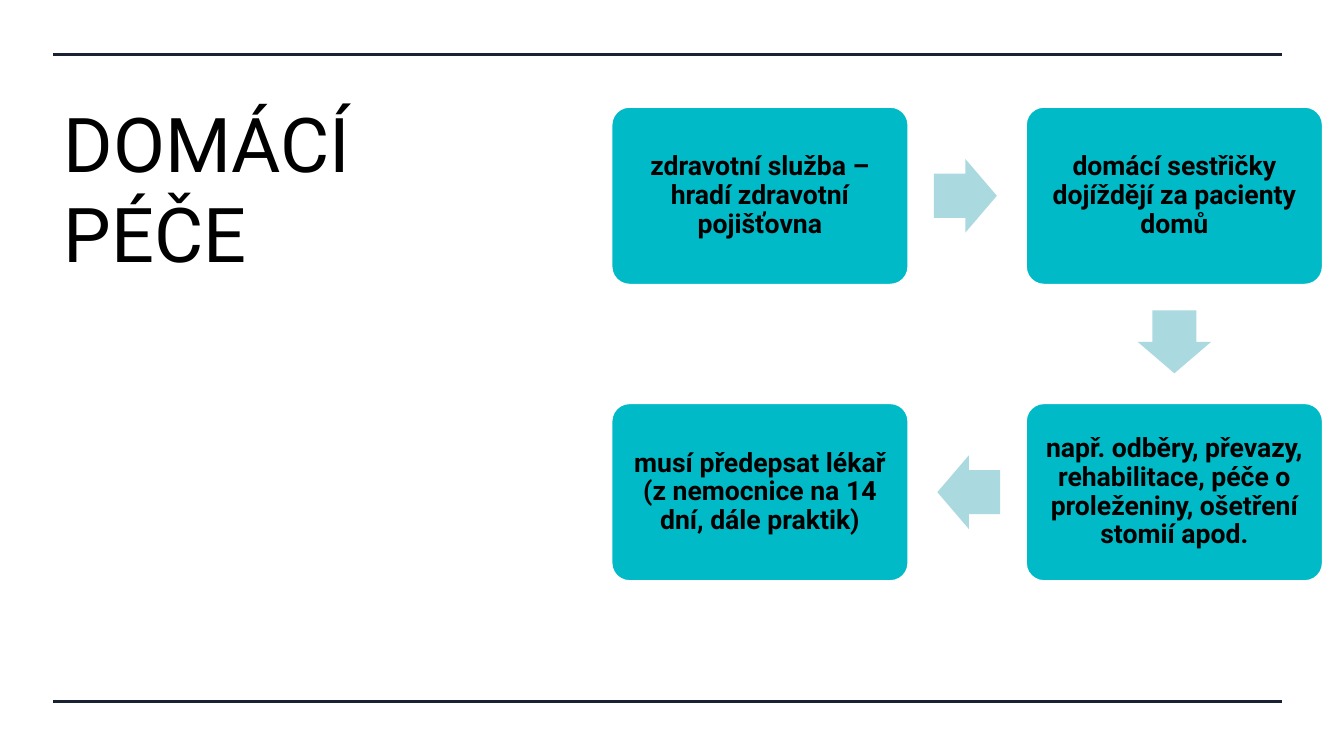
from lxml import etree
from pptx import Presentation
from pptx import util as u
from pptx.dml.color import RGBColor
from pptx.enum import shapes, text
from pptx.oxml.ns import qn

Pt = u.Pt


def color(hex_value):
    return RGBColor.from_string(hex_value)


def add_run(p, words, size, bold):
    r = p.add_run()
    r.text = words
    r.font.name = "Roboto"
    r.font.size = Pt(size)
    r.font.bold = bold
    r.font.color.rgb = color("000000")


prs = Presentation()
prs.slide_width, prs.slide_height = Pt(960), Pt(540)
s = prs.slides.add_slide(prs.slide_layouts[5])

# Rules at the top and bottom
for y in (38.8, 501.2):
    rule = s.shapes.add_connector(shapes.MSO_CONNECTOR.STRAIGHT,
                                  Pt(38.2), Pt(y), Pt(915.8), Pt(y))
    rule.line.color.rgb = color("182230")
    rule.line.width = Pt(2.25)
    etree.SubElement(rule._element.spPr, qn("a:effectLst"))

# Title
title = s.shapes.title
title.left, title.top, title.width, title.height = Pt(38.2), Pt(77), Pt(337.7), Pt(125.3)
tf = title.text_frame
tf.auto_size = text.MSO_AUTO_SIZE.NONE
tf.word_wrap = True
tf.vertical_anchor = text.MSO_ANCHOR.BOTTOM
p = tf.paragraphs[0]
p.alignment = text.PP_ALIGN.LEFT
add_run(p, "DOMÁCÍ PÉČE", 54, False)

# Steps, clockwise on a two by two grid
box_w, box_h = 211.7, 126.7
left, top, col_step, row_step = 437, 76.5, 296, 211.7
steps = [
    (0, 0, "zdravotní služba – hradí zdravotní pojišťovna"),
    (1, 0, "domácí sestřičky dojíždějí za pacienty domů"),
    (1, 1, "např. odběry, převazy, rehabilitace, péče o proleženiny, ošetření stomií apod."),
    (0, 1, "musí předepsat lékař (z nemocnice na 14 dní, dále praktik)"),
]
for col, row, words in steps:
    sp = s.shapes.add_shape(shapes.MSO_SHAPE.ROUNDED_RECTANGLE,
                            Pt(left + col * col_step), Pt(top + row * row_step),
                            Pt(box_w), Pt(box_h))
    sp.adjustments[0] = 0.1
    sp.shadow.inherit = False
    sp.fill.solid()
    sp.fill.fore_color.rgb = color("00BAC8")
    sp.line.color.rgb = color("FFFFFF")
    sp.line.width = Pt(1)
    tf = sp.text_frame
    tf.word_wrap = True
    tf.vertical_anchor = text.MSO_ANCHOR.MIDDLE
    tf.margin_left = tf.margin_right = tf.margin_top = tf.margin_bottom = Pt(5.8)
    p = tf.paragraphs[0]
    p.alignment = text.PP_ALIGN.CENTER
    p.line_spacing = 0.9
    add_run(p, words, 19, True)

# Arrows between the steps: centre x, centre y, rotation
arrow_w, arrow_h = 44.9, 52.5
row_mid = top + box_h / 2
arrows = [
    (689.6, row_mid, 0),
    (left + col_step + box_w / 2, 244.2, 90),
    (692, row_mid + row_step, 180),
]
for x, y, angle in arrows:
    sp = s.shapes.add_shape(shapes.MSO_SHAPE.RIGHT_ARROW,
                            Pt(x - arrow_w / 2), Pt(y - arrow_h / 2),
                            Pt(arrow_w), Pt(arrow_h))
    sp.adjustments[0], sp.adjustments[1] = 0.6, 0.5
    sp.rotation = angle
    sp.shadow.inherit = False
    sp.fill.solid()
    sp.fill.fore_color.rgb = color("ABD9E0")
    sp.line.fill.background()

prs.save("out.pptx")
